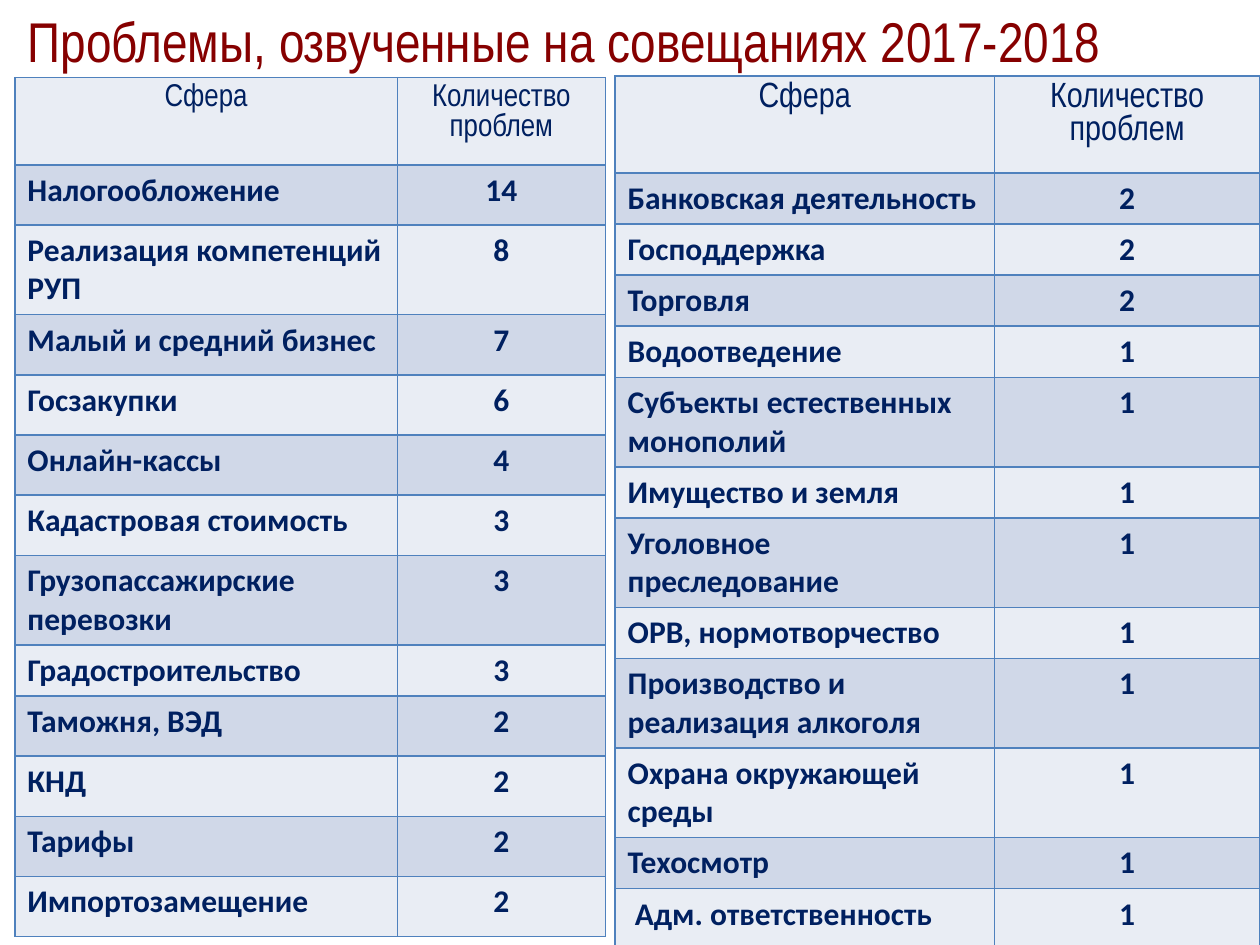
from pptx import Presentation
from pptx.util import Pt
from pptx.dml.color import RGBColor as RGB
from pptx.enum.text import PP_ALIGN as Align, MSO_ANCHOR as Anchor
from pptx.oxml import parse_xml
from pptx.oxml.ns import nsdecls

COLORS = {"title": "860000", "text": "002060", "line": "4F81BD",
          "light": "E9EDF4", "dark": "D0D8E8"}
HEAD = ("Сфера", "Количество проблем")
LEFT = [("Налогообложение", 14), ("Реализация компетенций РУП", 8),
        ("Малый и средний бизнес", 7), ("Госзакупки", 6),
        ("Онлайн-кассы", 4), ("Кадастровая стоимость", 3),
        ("Грузопассажирские перевозки", 3), ("Градостроительство", 3),
        ("Таможня, ВЭД", 2), ("КНД", 2), ("Тарифы", 2),
        ("Импортозамещение", 2)]
RIGHT = [("Банковская деятельность", 2), ("Господдержка", 2),
         ("Торговля", 2), ("Водоотведение", 1),
         ("Субъекты естественных монополий", 1), ("Имущество и земля", 1),
         ("Уголовное преследование", 1), ("ОРВ, нормотворчество", 1),
         ("Производство и реализация алкоголя", 1),
         ("Охрана окружающей среды", 1), ("Техосмотр", 1),
         (" Адм. ответственность", 1)]


def write(frame, text, size=18, font="Calibri", color="text", bold=False,
          align=Align.LEFT):
    para = frame.paragraphs[0]
    para.alignment = align
    run = para.add_run()
    run.text = text
    run.font.size = Pt(size)
    run.font.name = font
    run.font.bold = bold
    run.font.color.rgb = RGB.from_string(COLORS[color])


def add_title(slide, text):
    title = slide.shapes.title
    title.left, title.top = Pt(8.5), Pt(0)
    title.width, title.height = Pt(711.5), Pt(46)
    title.text_frame.vertical_anchor = Anchor.BOTTOM
    write(title.text_frame, text, size=32, font="Arial Narrow", color="title")


def style_cell(cell, fill):
    """Draw the four borders, then the fill, in the order the schema needs."""
    props = cell._tc.get_or_add_tcPr()
    for side in ("lnL", "lnR", "lnT", "lnB"):
        props.append(parse_xml(
            f'<a:{side} {nsdecls("a")} w="{Pt(1)}"><a:solidFill>'
            f'<a:srgbClr val="{COLORS["line"]}"/></a:solidFill></a:{side}>'))
    cell.fill.solid()
    cell.fill.fore_color.rgb = RGB.from_string(COLORS[fill])


def add_grid(slide, left, top, widths, heights, data, head):
    """Add a two-column table; head is the size of its heading text."""
    rows = [HEAD] + data
    grid = slide.shapes.add_table(len(rows), 2, Pt(left), Pt(top),
                                  Pt(sum(widths)), Pt(sum(heights))).table
    for col, width in zip(grid.columns, widths):
        col.width = Pt(width)
    for r, (row, height) in enumerate(zip(rows, heights)):
        grid.rows[r].height = Pt(height)
        for c, value in enumerate(row):
            cell = grid.cell(r, c)
            style_cell(cell, "dark" if r % 2 else "light")
            if r == 0:
                write(cell.text_frame, value, size=head, font="Arial Narrow",
                      align=Align.CENTER)
            else:
                write(cell.text_frame, str(value), bold=True,
                      align=Align.CENTER if c else Align.LEFT)


def main():
    deck = Presentation()
    deck.slide_width, deck.slide_height = Pt(720), Pt(540)
    slide = deck.slides.add_slide(deck.slide_layouts[5])
    add_title(slide, "Проблемы, озвученные на совещаниях 2017-2018")
    add_grid(slide, 8.5, 44.3, (218.5, 119),
             [50] + [34.4] * 7 + [27.5] + [34.4] * 4, LEFT, head=18)
    add_grid(slide, 351.5, 43.4, (216.7, 151.8),
             [55.4] + [26] * 11 + [34.4], RIGHT, head=20)
    deck.save("out.pptx")


if __name__ == "__main__":
    main()
